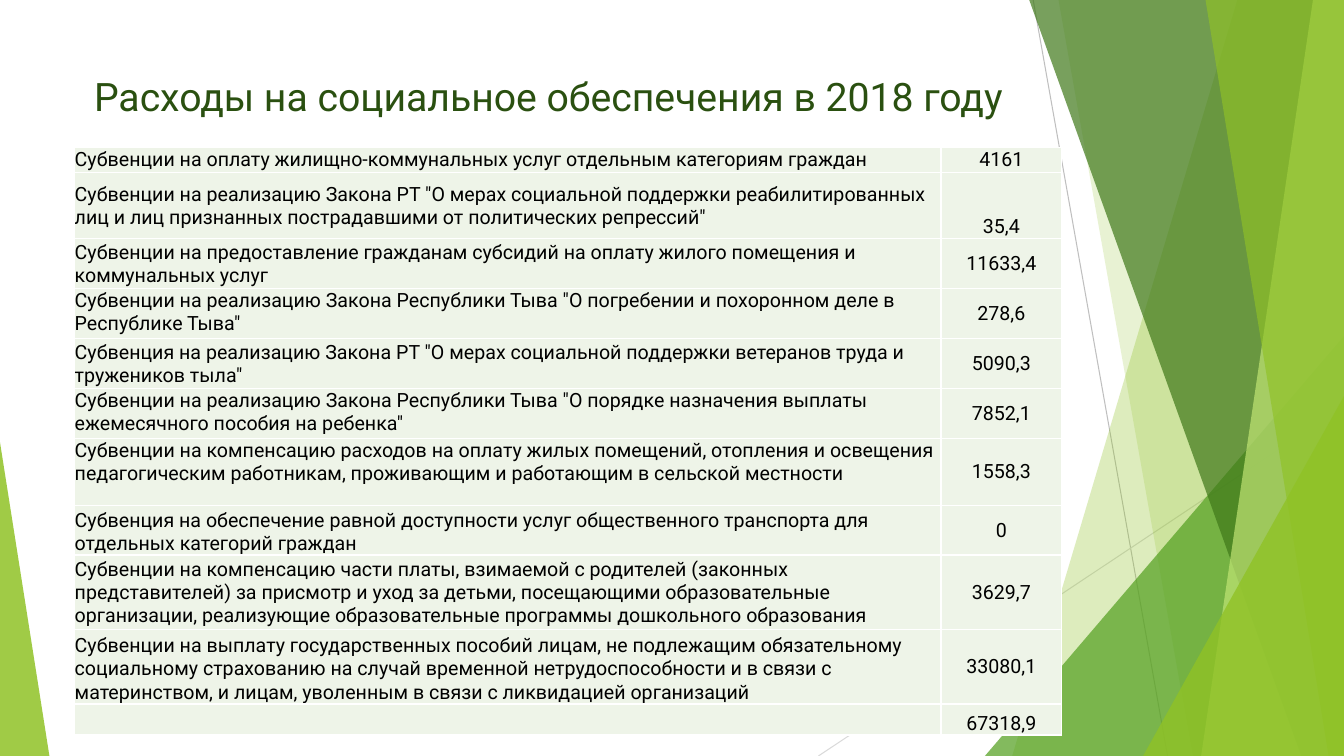
from lxml.etree import SubElement
from pptx import Presentation
from pptx.dml.color import RGBColor
from pptx.enum.shapes import MSO_CONNECTOR as CONN, MSO_SHAPE as SHAPE
from pptx.enum.text import MSO_ANCHOR as ANCHOR, PP_ALIGN as ALIGN
from pptx.oxml import parse_xml
from pptx.oxml.ns import qn
from pptx.util import Pt

W, H = 960, 540
TOP, MID, BOTTOM = ANCHOR.TOP, ANCHOR.MIDDLE, ANCHOR.BOTTOM
DRAWING_NS = "http://schemas.openxmlformats.org/drawingml/2006/main"

# label, value, row height, label anchor, value anchor
EXPENSES = [
    ("Субвенции на оплату жилищно-коммунальных услуг отдельным категориям граждан",
     "4161", 17.7, TOP, MID),
    ("Субвенции на реализацию Закона РТ \"О мерах социальной поддержки реабилитированных "
     "лиц и лиц признанных пострадавшими от политических репрессий\"",
     "35,4", 47.5, MID, BOTTOM),
    ("Субвенции на предоставление гражданам субсидий на оплату жилого помещения и "
     "коммунальных услуг", "11633,4", 35.7, MID, MID),
    ("Субвенции на реализацию Закона Республики Тыва \"О погребении и похоронном деле в "
     "Республике Тыва\"", "278,6", 35.7, TOP, MID),
    ("Субвенция на реализацию Закона РТ \"О мерах социальной поддержки ветеранов труда и "
     "тружеников тыла\"", "5090,3", 35.7, MID, MID),
    ("Субвенции на реализацию Закона Республики Тыва \"О порядке назначения выплаты "
     "ежемесячного пособия на ребенка\"", "7852,1", 35.7, TOP, MID),
    ("Субвенции на компенсацию расходов на оплату жилых помещений, отопления и освещения "
     "педагогическим работникам, проживающим и работающим в сельской местности",
     "1558,3", 47.5, TOP, MID),
    ("Субвенция на обеспечение равной доступности услуг общественного транспорта для "
     "отдельных категорий граждан", "0", 35.7, BOTTOM, MID),
    ("Субвенции на компенсацию части платы, взимаемой с родителей (законных "
     "представителей) за присмотр и уход за детьми, посещающими образовательные "
     "организации, реализующие образовательные программы дошкольного образования",
     "3629,7", 53.2, MID, MID),
    ("Субвенции на выплату государственных пособий лицам, не подлежащим обязательному "
     "социальному страхованию на случай временной нетрудоспособности и в связи с "
     "материнством, и лицам, уволенным в связи с ликвидацией организаций",
     "33080,1", 53.2, BOTTOM, MID),
    ("", "67318,9", 19.3, TOP, BOTTOM),
]


def rgb(color):
    return RGBColor.from_string(color)


def put_text(tf, text, size=14, color="000000", align=ALIGN.LEFT, font="Roboto"):
    tf.word_wrap = True
    p = tf.paragraphs[0]
    p.alignment = align
    r = p.add_run()
    r.text = text
    r.font.name, r.font.size = font, Pt(size)
    r.font.color.rgb = rgb(color)


class Deck:
    cell_fill, border = "EEF4E8", "FFFFFF"

    def __init__(self):
        self.prs = Presentation()
        self.prs.slide_width, self.prs.slide_height = Pt(W), Pt(H)
        self.s = self.prs.slides.add_slide(self.prs.slide_layouts[6])

    def line(self, x1, y1, x2, y2, color):
        c = self.s.shapes.add_connector(CONN.STRAIGHT, Pt(x1), Pt(y1), Pt(x2), Pt(y2))
        c.line.color.rgb, c.line.width = rgb(color), Pt(0.75)
        SubElement(c._element.spPr, qn("a:effectLst"))

    def paint(self, sp, color, opacity):
        sp.shadow.inherit = False
        sp.line.fill.background()
        sp.fill.solid()
        sp.fill.fore_color.rgb = rgb(color)
        clr = sp._element.spPr.find(".//" + qn("a:srgbClr"))
        SubElement(clr, qn("a:alpha")).set("val", str(opacity * 1000))

    def band(self, top_x, bottom_x, color, opacity, right=W):
        """Slanted strip from its left edge to the right side of the slide."""
        fb = self.s.shapes.build_freeform(Pt(top_x), Pt(-0.6))
        fb.add_line_segments([(Pt(right), Pt(-0.6)), (Pt(right), Pt(H)), (Pt(bottom_x), Pt(H))])
        self.paint(fb.convert_to_shape(), color, opacity)

    def triangle(self, x, y, w, apex, color, opacity):
        sp = self.s.shapes.add_shape(SHAPE.ISOSCELES_TRIANGLE, Pt(x), Pt(y), Pt(w), Pt(H - y))
        sp.adjustments[0] = apex
        self.paint(sp, color, opacity)

    def title(self, text, x, y, w, h):
        tf = self.s.shapes.add_textbox(Pt(x), Pt(y), Pt(w), Pt(h)).text_frame
        put_text(tf, text, size=28, color="2A5010", align=ALIGN.CENTER)

    def cell(self, cell, text, anchor, align):
        cell.margin_left = cell.margin_right = cell.margin_top = Pt(0.5)
        cell.margin_bottom = 0
        cell.vertical_anchor = anchor
        put_text(cell.text_frame, text, align=align)
        cell.fill.solid()
        cell.fill.fore_color.rgb = rgb(self.cell_fill)
        tc_pr = cell._tc.get_or_add_tcPr()
        for i, side in enumerate("LRTB"):
            tc_pr.insert(i, parse_xml(
                f'<a:ln{side} xmlns:a="{DRAWING_NS}" w="{Pt(1)}"><a:solidFill>'
                f'<a:srgbClr val="{self.border}"/></a:solidFill></a:ln{side}>'))

    def table(self, x, y, widths, rows):
        heights = [row[2] for row in rows]
        tbl = self.s.shapes.add_table(len(rows), len(widths), Pt(x), Pt(y),
                                      Pt(sum(widths)), Pt(sum(heights))).table
        tbl.first_row = tbl.horz_banding = False
        for col, width in zip(tbl.columns, widths):
            col.width = Pt(width)
        for i, (label, value, height, label_anchor, value_anchor) in enumerate(rows):
            tbl.rows[i].height = Pt(height)
            self.cell(tbl.cell(i, 0), label, label_anchor, ALIGN.LEFT)
            self.cell(tbl.cell(i, 1), value, value_anchor, ALIGN.CENTER)


def main():
    deck = Deck()

    # Background decoration
    deck.line(738, 0, 834, H, "BFBFBF")
    deck.line(W, 290, 584.6, H, "D9D9D9")
    deck.band(884, 723, "90C226", 30)
    deck.band(756, 852, "90C226", 20)
    deck.triangle(703.5, 240, 256.5, 1, "54A021", 72)
    deck.band(735, 929.5, "3F7819", 70)
    deck.band(938, 858, "C0E474", 70)
    deck.band(861, 949, "90C226", 65)
    deck.triangle(816.5, 283, 143.5, 1, "90C226", 80)
    deck.triangle(0, 316, 35.3, 0, "90C226", 85)

    # Title and expenses table
    deck.title("Расходы на социальное обеспечения в 2018 году", 53.3, 48.2, 676.8, 56.9)
    deck.table(52.9, 105.4, [619.2, 86.4], EXPENSES)

    deck.prs.save("out.pptx")


if __name__ == "__main__":
    main()
